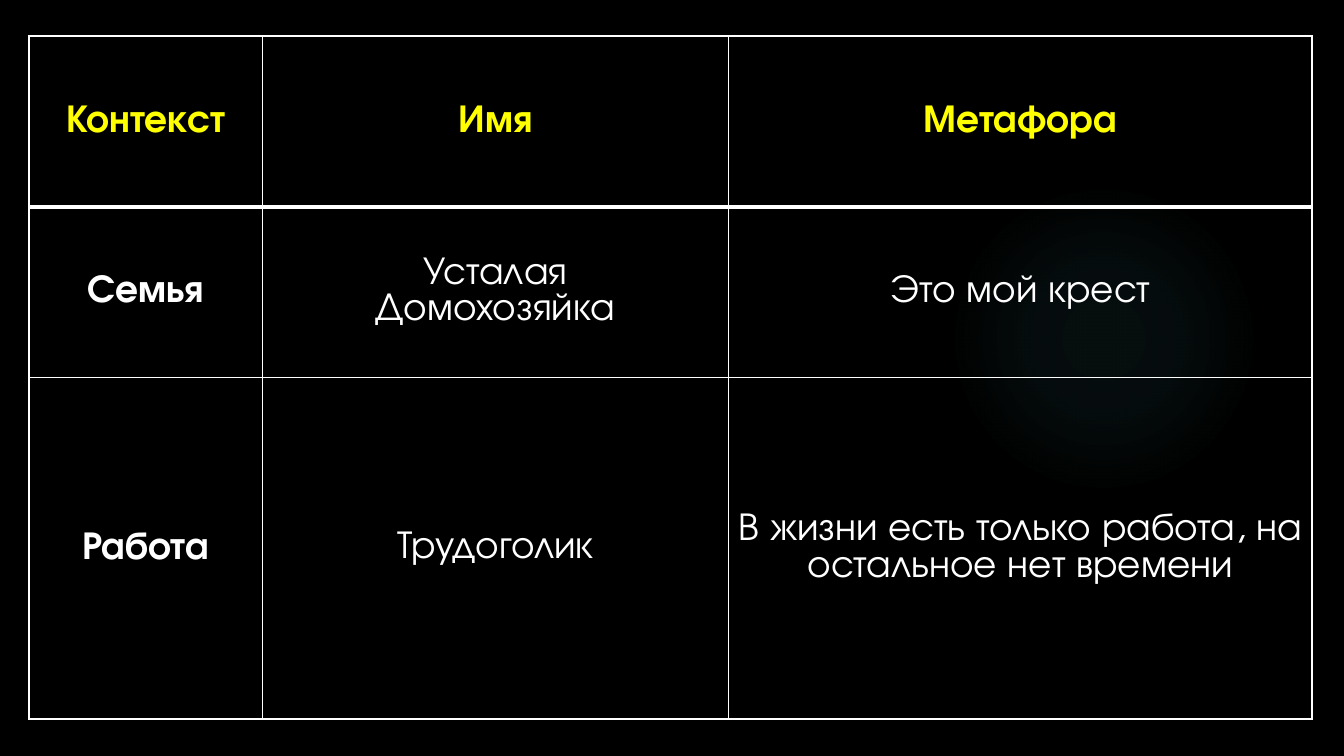
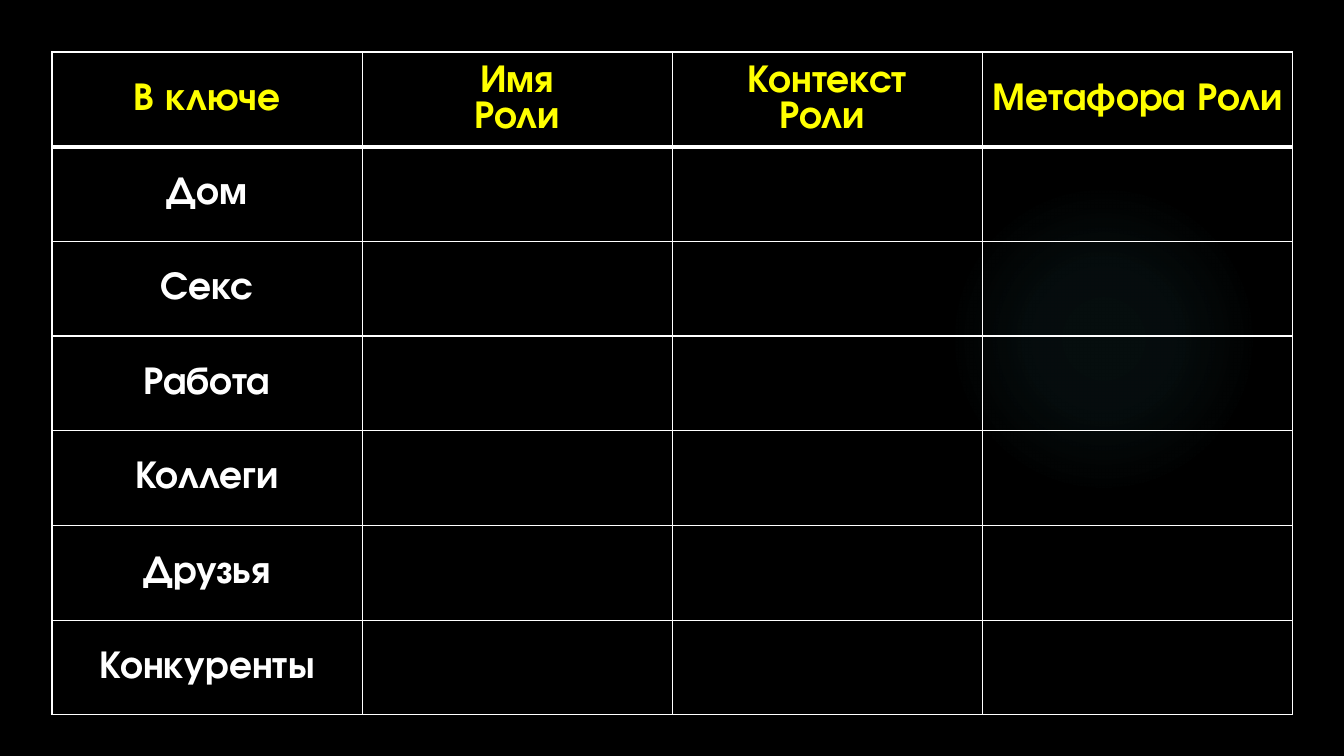
from pptx import Presentation
from pptx.dml.color import RGBColor
from pptx.enum.shapes import MSO_SHAPE
from pptx.enum.text import MSO_ANCHOR, PP_ALIGN
from pptx.oxml import parse_xml
from pptx.oxml.ns import nsdecls, qn
from pptx.util import Pt

# Content: a line break in a cell starts a new paragraph
SCENES = [
    dict(
        rows=[
            ["Контекст", "Имя", "Метафора"],
            ["Семья", "Усталая\nДомохозяйка", "Это мой крест"],
            ["Работа", "Трудоголик",
             "В жизни есть только работа, на остальное нет времени"],
        ],
        box=(29, 36, 1283, 683), wide=[2, 4, 5], tall=[1, 1, 2], pad=(7, 0),
    ),
    dict(
        rows=[
            ["В ключе", "Имя\nРоли", "Контекст\nРоли ", "Метафора Роли"],
            ["Дом"], ["Секс"], ["Работа"],
            ["Коллеги"], ["Друзья"], ["Конкуренты"],
        ],
        box=(52, 52, 1241, 663), wide=[1] * 4, tall=[1] * 7, pad=(10, 5),
    ),
]

# Shared style
HEX = dict(back="000000", text="FFFFFF", head="FFFF00", rule="FFFFFF", glow="50B9C1")
FONT = "TeX Gyre Adventor"
SIZE = 28
GLOW = (949, 184, 310, 310)
STOPS = [(0, 7), (36, 6), (69, 0)]  # position and opacity, percent
THIN, THICK = 1, 3


def px(n):
    return round(n * 914400 / 100.8)


def rgb(name):
    return RGBColor.from_string(HEX[name])


def share(total, parts):
    return [px(total * part / sum(parts)) for part in parts]


def put(frame, text, color="text", bold=False, size=SIZE, font=FONT):
    frame.text = text
    for para in frame.paragraphs:
        para.alignment = PP_ALIGN.CENTER
        face = para.font
        for run in para.runs:
            face = run.font
            face.name, face.size, face.bold = font, Pt(size), bold
            face.color.rgb = rgb(color)


def rule(cell, **sides):
    props = cell._tc.get_or_add_tcPr()
    for side, width in sides.items():
        props.append(parse_xml(
            f'<a:ln{side} {nsdecls("a")} w="{Pt(width)}"><a:solidFill>'
            f'<a:srgbClr val="{HEX["rule"]}"/></a:solidFill></a:ln{side}>'))


def add_glow(slide, master):
    glow = slide.shapes.add_shape(MSO_SHAPE.OVAL, *map(px, GLOW))
    glow.shadow.inherit = False
    glow.line.fill.background()
    glow.fill.background()
    stops = "".join(
        f'<a:gs pos="{pos * 1000}"><a:srgbClr val="{HEX["glow"]}">'
        f'<a:alpha val="{alpha * 1000}"/></a:srgbClr></a:gs>'
        for pos, alpha in STOPS)
    blend = parse_xml(
        f'<a:gradFill {nsdecls("a")}><a:gsLst>{stops}</a:gsLst><a:path path="circle">'
        '<a:fillToRect l="50000" t="50000" r="50000" b="50000"/></a:path></a:gradFill>')
    props = glow.element.spPr
    props.replace(props.find(qn("a:noFill")), blend)
    # Move to the master, so that every slide shows it
    glow.element.nvSpPr.cNvPr.set("id", "99")
    master.shapes.element.append(glow.element)


def add_grid(slide, rows, box, wide, tall, pad):
    grid = slide.shapes.add_table(len(tall), len(wide), *map(px, box)).table
    grid.horz_banding = False
    for col, width in zip(grid.columns, share(box[2], wide)):
        col.width = width
    for row, height in zip(grid.rows, share(box[3], tall)):
        row.height = height
    for r, row in enumerate(grid.rows):
        for c, cell in enumerate(row.cells):
            cell.vertical_anchor = MSO_ANCHOR.MIDDLE
            cell.margin_left = cell.margin_right = px(pad[0])
            cell.margin_top = cell.margin_bottom = px(pad[1])
            rule(cell, L=THIN, R=THIN, T=THICK if r == 1 else THIN,
                 B=THICK if r == 0 else THIN)
            cell.fill.background()
            if c < len(rows[r]):
                put(cell.text_frame, rows[r][c], bold=r == 0 or c == 0,
                    color="head" if r == 0 else "text")


def main():
    deck = Presentation()
    deck.slide_width, deck.slide_height = px(1344), px(756)
    master = deck.slide_master
    master.background.fill.solid()
    master.background.fill.fore_color.rgb = rgb("back")
    slides = [deck.slides.add_slide(deck.slide_layouts[6]) for _ in SCENES]
    add_glow(slides[0], master)
    for slide, scene in zip(slides, SCENES):
        add_grid(slide, **scene)
    deck.save("out.pptx")


if __name__ == "__main__":
    main()
